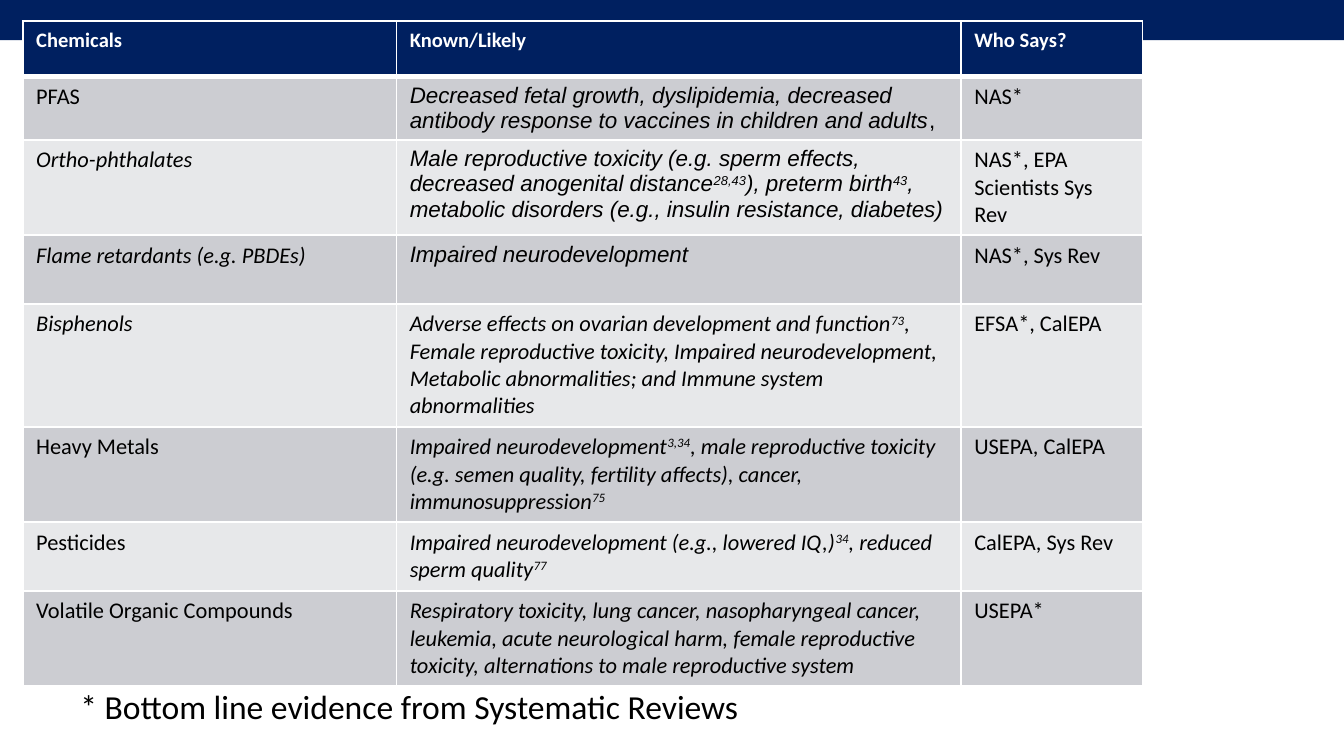
import pptx
import pptx.util
import pptx.dml.color
import pptx.enum.shapes
import pptx.enum.text
import lxml.etree
from dataclasses import dataclass
from pptx.oxml.ns import qn

Cm = pptx.util.Cm
Pt = pptx.util.Pt


@dataclass(frozen=True)
class Theme:
    navy: str = "002060"
    white: str = "FFFFFF"
    black: str = "000000"
    bands: tuple = ("CCCDD2", "E7E8EA")
    sans: str = "Calibri"
    alt: str = "Arial"
    head: int = 11
    body: int = 12
    note: int = 18


THEME = Theme()
WIDTHS = (7.06, 10.67, 3.43)
HEIGHTS = (1.04, 1.2, 1.8, 1.3, 2.32, 1.8, 1.3, 1.8)
HEADS = ("Chemicals", "Known/Likely", "Who Says?")

# Chemical, italic name, font of effects, effects, source.
# In effects, ^ switches raised text and | starts upright text.
ROWS = (
    ("PFAS", False, THEME.alt,
     "Decreased fetal growth, dyslipidemia, decreased antibody response "
     "to vaccines in children and adults|,", "NAS*"),
    ("Ortho-phthalates", True, THEME.alt,
     "Male reproductive toxicity (e.g. sperm effects, decreased anogenital "
     "distance^28,43^), preterm birth^43^, metabolic disorders (e.g., insulin "
     "resistance, diabetes)", "NAS*, EPA Scientists Sys Rev"),
    ("Flame retardants (e.g. PBDEs)", True, THEME.alt,
     "Impaired neurodevelopment", "NAS*, Sys Rev"),
    ("Bisphenols", True, THEME.sans,
     "Adverse effects on ovarian development and function^73^,\n"
     "Female reproductive toxicity, Impaired neurodevelopment,\n"
     "Metabolic abnormalities; and Immune system abnormalities",
     "EFSA*, CalEPA"),
    ("Heavy Metals", False, THEME.sans,
     "Impaired neurodevelopment^3,34^, male reproductive toxicity (e.g. semen "
     "quality, fertility affects), cancer, immunosuppression^75^",
     "USEPA, CalEPA"),
    ("Pesticides", False, THEME.sans,
     "Impaired neurodevelopment (e.g., lowered IQ,)^34^, reduced sperm "
     "quality^77^", "CalEPA, Sys Rev"),
    ("Volatile Organic Compounds", False, THEME.sans,
     "Respiratory toxicity, lung cancer, nasopharyngeal cancer, leukemia, "
     "acute neurological harm, female reproductive toxicity, alternations to "
     "male reproductive system", "USEPA*"),
)


def rgb(code):
    return pptx.dml.color.RGBColor.from_string(code)


def paint(shape, code):
    shape.fill.solid()
    shape.fill.fore_color.rgb = rgb(code)


def add_run(para, text, color, raised=False, **form):
    run = para.add_run()
    run.text = text
    for key, value in form.items():
        setattr(run.font, key, value)
    run.font.color.rgb = rgb(color)
    if raised:
        run.font._element.set("baseline", "30000")


def write(frame, text, color, **form):
    for i, line in enumerate(text.split("\n")):
        para = frame.paragraphs[0] if i == 0 else frame.add_paragraph()
        for j, part in enumerate(line.split("|")):
            look = dict(form, italic=False) if j else form
            for k, bit in enumerate(part.split("^")):
                if bit:
                    add_run(para, bit, color, raised=k % 2 == 1, **look)


def edge(cell, top, base):
    props = cell._tc.get_or_add_tcPr()
    for side, width in (("L", 1), ("R", 1), ("T", top), ("B", base)):
        line = lxml.etree.SubElement(props, qn(f"a:ln{side}"), w=str(Pt(width)))
        fill = lxml.etree.SubElement(line, qn("a:solidFill"))
        lxml.etree.SubElement(fill, qn("a:srgbClr"), val=THEME.white)


def add_band(slide, box):
    band = slide.shapes.add_shape(pptx.enum.shapes.MSO_SHAPE.RECTANGLE, *box)
    band.shadow.inherit = False
    paint(band, THEME.navy)
    band.line.fill.background()


def add_grid(slide, box):
    grid = slide.shapes.add_table(len(HEIGHTS), len(WIDTHS), *box).table
    for col, width in zip(grid.columns, WIDTHS):
        col.width = Cm(width)
    for row, height in zip(grid.rows, HEIGHTS):
        row.height = Cm(height)

    # Header row
    for cell, text in zip(grid.rows[0].cells, HEADS):
        edge(cell, 1, 3)
        paint(cell, THEME.navy)
        write(cell.text_frame, text, THEME.white, name=THEME.sans,
              size=Pt(THEME.head), bold=True)

    # Body rows
    for i, (name, slant, font, effects, source) in enumerate(ROWS):
        parts = ((name, THEME.sans, slant), (effects, font, True),
                 (source, THEME.sans, False))
        for cell, (text, face, italic) in zip(grid.rows[i + 1].cells, parts):
            edge(cell, 1 if i else 3, 1)
            paint(cell, THEME.bands[i % 2])
            write(cell.text_frame, text, THEME.black, name=face,
                  size=Pt(THEME.body), bold=False, italic=italic)


def add_note(slide, box):
    frame = slide.shapes.add_textbox(*box).text_frame
    frame.word_wrap = False
    frame.auto_size = pptx.enum.text.MSO_AUTO_SIZE.SHAPE_TO_FIT_TEXT
    write(frame, "* Bottom line evidence from Systematic Reviews",
          THEME.black, name=THEME.sans, size=Pt(THEME.note))


def main():
    deck = pptx.Presentation()
    deck.slide_width, deck.slide_height = Cm(25.4), Cm(14.29)
    slide = deck.slides.add_slide(deck.slide_layouts[6])
    add_band(slide, (0, 0, deck.slide_width, Cm(0.76)))
    add_grid(slide, (Cm(0.43), Cm(0.4), Cm(sum(WIDTHS)), Cm(sum(HEIGHTS))))
    add_note(slide, (Cm(1.27), Cm(12.85), Cm(13.59), Cm(1.02)))
    deck.save("out.pptx")


if __name__ == "__main__":
    main()
